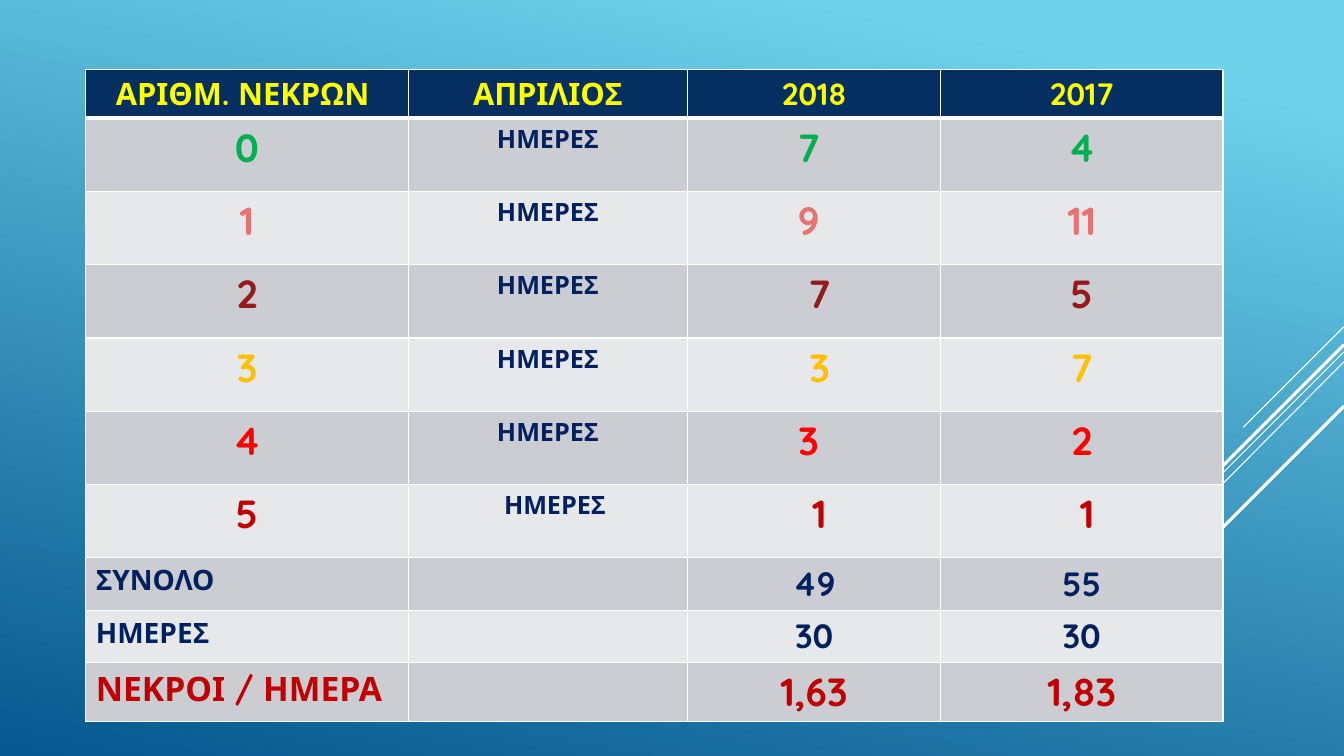
from lxml.etree import SubElement
from pptx import Presentation
from pptx.dml.color import RGBColor
from pptx.enum.shapes import MSO_CONNECTOR
from pptx.enum.text import PP_ALIGN
from pptx.oxml.ns import qn
from pptx.util import Inches, Pt

WHITE = RGBColor(0xFF, 0xFF, 0xFF)
SKY = RGBColor(0x6E, 0xD2, 0xEB)
OCEAN = RGBColor(0x06, 0x58, 0x8E)
HEADER_BLUE = RGBColor(0x05, 0x2F, 0x61)
DARK_BAND = RGBColor(0xCC, 0xCD, 0xD2)
LIGHT_BAND = RGBColor(0xE7, 0xE8, 0xEA)
NAVY = RGBColor(0x00, 0x20, 0x60)
YELLOW = RGBColor(0xFF, 0xFF, 0x00)
GREEN = RGBColor(0x00, 0xB0, 0x50)
PINK = RGBColor(0xE6, 0x72, 0x72)
MAROON = RGBColor(0x94, 0x1A, 0x1B)
AMBER = RGBColor(0xFF, 0xC0, 0x00)
RED = RGBColor(0xFF, 0x00, 0x00)
DARK_RED = RGBColor(0xC0, 0x00, 0x00)

COLUMN_WIDTHS = [3.2, 2.77, 2.51, 2.8]
HEADER = ["ΑΡΙΘΜ. ΝΕΚΡΩΝ ", "ΑΠΡΙΛΙΟΣ", "2018", "2017"]
# Deaths per day, days in 2018, days in 2017, number colour
DAY_COUNTS = [
    ("0", "7 ", "4", GREEN),
    ("1", "9 ", "11", PINK),
    ("2", " 7", "5", MAROON),
    ("3", " 3", "7", AMBER),
    ("4", "3 ", "2", RED),
    ("5", " 1", " 1", DARK_RED),
]
# Label, 2018, 2017, colour, label size, number size, row height
TOTALS = [
    ("ΣΥΝΟΛΟ", "49", "55", NAVY, 20, 24, 0.52),
    ("ΗΜΕΡΕΣ", "30", "30", NAVY, 20, 24, 0.52),
    ("ΝΕΚΡΟΙ / ΗΜΕΡΑ", "1,63", "1,83", DARK_RED, 24, 28, 0.58),
]
# Right end height, left end x and y, width in points
DIAGONALS = [
    (3.24, 12.33, 4.24, 0.75),
    (3.49, 10.07, 6.75, 0.75),
    (3.59, 11.26, 5.67, 0.75),
    (3.42, 11.42, 5.33, 2.25),
    (4.03, 11.94, 5.42, 2.25),
]


class SlideBuilder:
    font = "Quicksand"

    def __init__(self, presentation):
        self.slide = presentation.slides.add_slide(presentation.slide_layouts[6])

    def background(self, start, end, angle):
        fill = self.slide.background.fill
        fill.gradient()
        fill.gradient_angle = angle
        for stop, position, color in zip(fill.gradient_stops, (0.1, 1), (start, end)):
            stop.position = position
            stop.color.rgb = color

    def line(self, x1, y1, x2, y2, width):
        connector = self.slide.shapes.add_connector(
            MSO_CONNECTOR.STRAIGHT, Inches(x1), Inches(y1), Inches(x2), Inches(y2))
        connector.line.color.rgb = WHITE
        connector.line.width = Pt(width)
        SubElement(connector._element.spPr, qn("a:effectLst"))

    def table(self, left, top, widths, heights):
        table = self.slide.shapes.add_table(
            len(heights), len(widths), Inches(left), Inches(top),
            Inches(sum(widths)), Inches(sum(heights))).table
        for column, width in zip(table.columns, widths):
            column.width = Inches(width)
        for row, height in zip(table.rows, heights):
            row.height = Inches(height)
        return table

    def cell(self, cell, text, size, color, fill, alignment=PP_ALIGN.CENTER):
        cell.text_frame.text = text
        paragraph = cell.text_frame.paragraphs[0]
        paragraph.alignment = alignment
        for run in paragraph.runs:
            run.font.name = self.font
            run.font.size = Pt(size)
            run.font.bold = True
            run.font.color.rgb = color
        cell.fill.solid()
        cell.fill.fore_color.rgb = fill

    def borders(self, cell, top=1, bottom=1):
        properties = cell._tc.get_or_add_tcPr()
        sides = [("a:lnL", 1), ("a:lnR", 1), ("a:lnT", top), ("a:lnB", bottom)]
        for index, (side, width) in enumerate(sides):
            border = SubElement(properties, qn(side), w=str(Pt(width)))
            fill = SubElement(border, qn("a:solidFill"))
            SubElement(fill, qn("a:srgbClr"), val=str(WHITE))
            properties.insert(index, border)


def main():
    presentation = Presentation()
    presentation.slide_width = Inches(13.33)
    presentation.slide_height = Inches(7.5)
    builder = SlideBuilder(presentation)
    builder.background(SKY, OCEAN, 258)
    for right_y, left_x, left_y, width in DIAGONALS:
        builder.line(13.33, right_y, left_x, left_y, width)

    rows = [[(text, 22, YELLOW) for text in HEADER]]
    heights = [0.48]
    for deaths, days_2018, days_2017, color in DAY_COUNTS:
        rows.append([(deaths, 28, color), ("ΗΜΕΡΕΣ", 18, NAVY),
                     (days_2018, 28, color), (days_2017, 28, color)])
        heights.append(0.727)
    for label, total_2018, total_2017, color, label_size, size, height in TOTALS:
        rows.append([(label, label_size, color), ("", size, color),
                     (total_2018, size, color), (total_2017, size, color)])
        heights.append(height)

    table = builder.table(0.85, 0.69, COLUMN_WIDTHS, heights)
    first_total = 1 + len(DAY_COUNTS)
    for row_index, row in enumerate(rows):
        band = DARK_BAND if row_index % 2 else LIGHT_BAND
        fill = band if row_index else HEADER_BLUE
        for column_index, (text, size, color) in enumerate(row):
            is_label = row_index >= first_total and column_index == 0
            alignment = PP_ALIGN.LEFT if is_label else PP_ALIGN.CENTER
            cell = table.cell(row_index, column_index)
            builder.cell(cell, text, size, color, fill, alignment)
            builder.borders(cell, top=3 if row_index == 1 else 1,
                            bottom=3 if row_index == 0 else 1)
    table.cell(first_total - 1, 1).margin_left = Inches(0.24)
    presentation.save("out.pptx")


if __name__ == "__main__":
    main()
